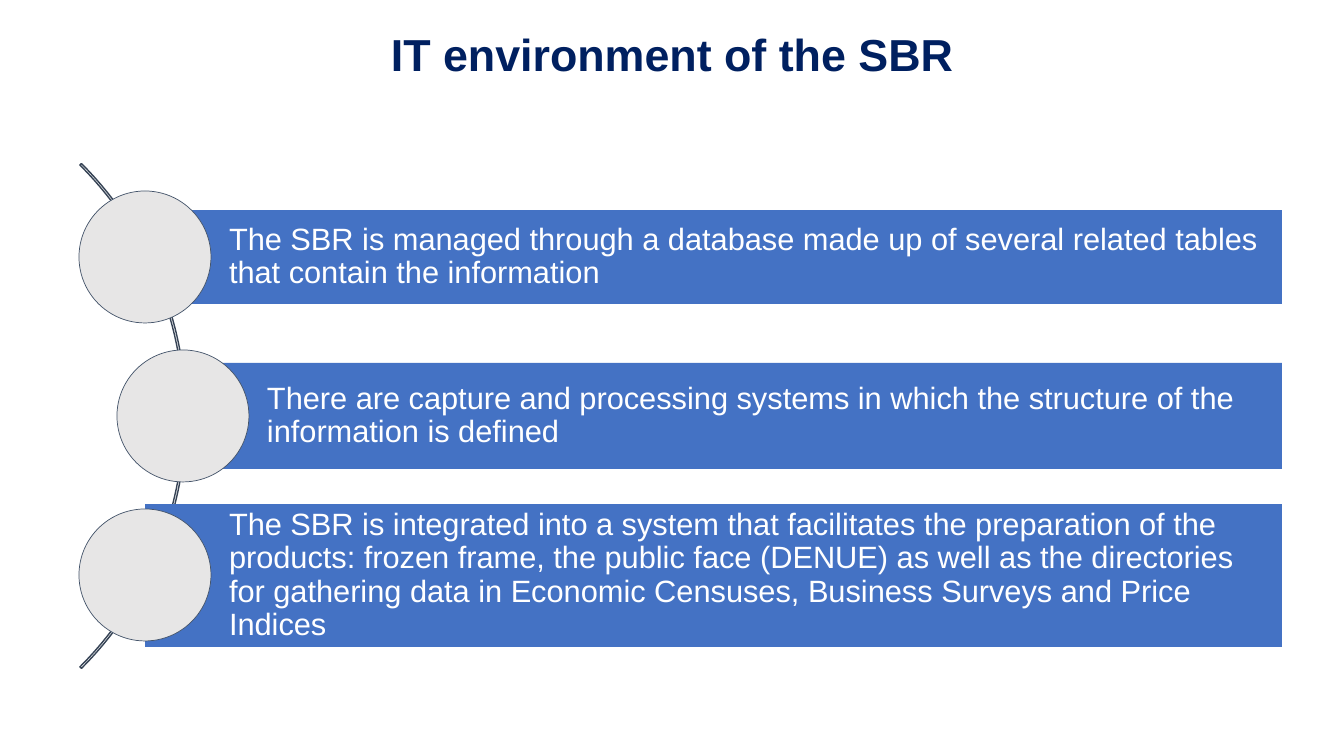
"""Build the slide on the IT environment of the SBR."""
from pptx import Presentation
from pptx import util as u
from pptx.dml.color import RGBColor
from pptx.enum import shapes, text

NAVY = RGBColor(0x00, 0x20, 0x60)
BLUE = RGBColor(0x44, 0x72, 0xC4)
GREY = RGBColor(0xE7, 0xE6, 0xE6)
SLATE = RGBColor(0x44, 0x54, 0x6A)
ARC_LINE = RGBColor(0x36, 0x43, 0x55)
WHITE = RGBColor(0xFF, 0xFF, 0xFF)
PX = 12192000 / 1344


def add_outline(kind, frame, fill, line, width):
    shape = page.shapes.add_shape(kind, *[u.Emu(round(n * PX)) for n in frame])
    shape.shadow.inherit = False
    if fill is None:
        shape.fill.background()
    else:
        shape.fill.solid()
        shape.fill.fore_color.rgb = fill
    if line is None:
        shape.line.fill.background()
    else:
        shape.line.color.rgb = line
        shape.line.width = u.Pt(width)
    return shape


def write(box, wording, color, frame_format, para_format, font_format):
    para = box.text_frame.paragraphs[0]
    span = para.add_run()
    span.text = wording
    span.font.color.rgb = color
    for target, values in ((box.text_frame, frame_format), (para, para_format), (span.font, font_format)):
        for name, value in values.items():
            setattr(target, name, value)


deck = Presentation()
deck.slide_width, deck.slide_height = u.Emu(round(1344 * PX)), u.Emu(round(756 * PX))
page = deck.slides.add_slide(deck.slide_layouts[6])

arc = add_outline(shapes.MSO_SHAPE.BLOCK_ARC, (-528, 59, 714, 714), None, ARC_LINE, 1)
for index, value in enumerate((189, 27, 0.003)):
    arc.adjustments[index] = value

CIRCLE = 132
RIGHT = 1282
FIRST_MIDDLE, PITCH = 257, 159
points = [
    (145, 94, "The SBR is managed through a database made up of several related tables "
              "that contain the information"),
    (183, 106, "There are capture and processing systems in which the structure of the "
               "information is defined"),
    (145, 143, "The SBR is integrated into a system that facilitates the preparation of the "
               "products: frozen frame, the public face (DENUE) as well as the directories "
               "for gathering data in Economic Censuses, Business Surveys and Price Indices"),
]
inset = u.Emu(round(6 * PX))
bar_frame = {
    "word_wrap": True, "vertical_anchor": text.MSO_ANCHOR.MIDDLE,
    "margin_left": u.Emu(round(84 * PX)), "margin_top": inset,
    "margin_right": inset, "margin_bottom": inset,
}
bar_para = {"alignment": text.PP_ALIGN.LEFT, "line_spacing": 0.9}
bar_font = {"name": "Arial", "size": u.Pt(22)}

for row, (left, height, wording) in enumerate(points):
    middle = FIRST_MIDDLE + row * PITCH
    bar = add_outline(shapes.MSO_SHAPE.RECTANGLE, (left, middle - height // 2, RIGHT - left, height),
                      BLUE, None, 0)
    write(bar, wording, WHITE, bar_frame, bar_para, bar_font)
    add_outline(shapes.MSO_SHAPE.OVAL, (left - CIRCLE // 2, middle - CIRCLE // 2, CIRCLE, CIRCLE),
                GREY, SLATE, 0.5)

title = page.shapes.add_textbox(*[u.Emu(round(n * PX)) for n in (324, 28, 697, 52)])
write(title, "IT environment of the SBR", NAVY, {"word_wrap": True},
      {"alignment": text.PP_ALIGN.CENTER, "line_spacing": 0.9},
      {"name": "Arial", "size": u.Pt(32), "bold": True})

deck.save("out.pptx")
